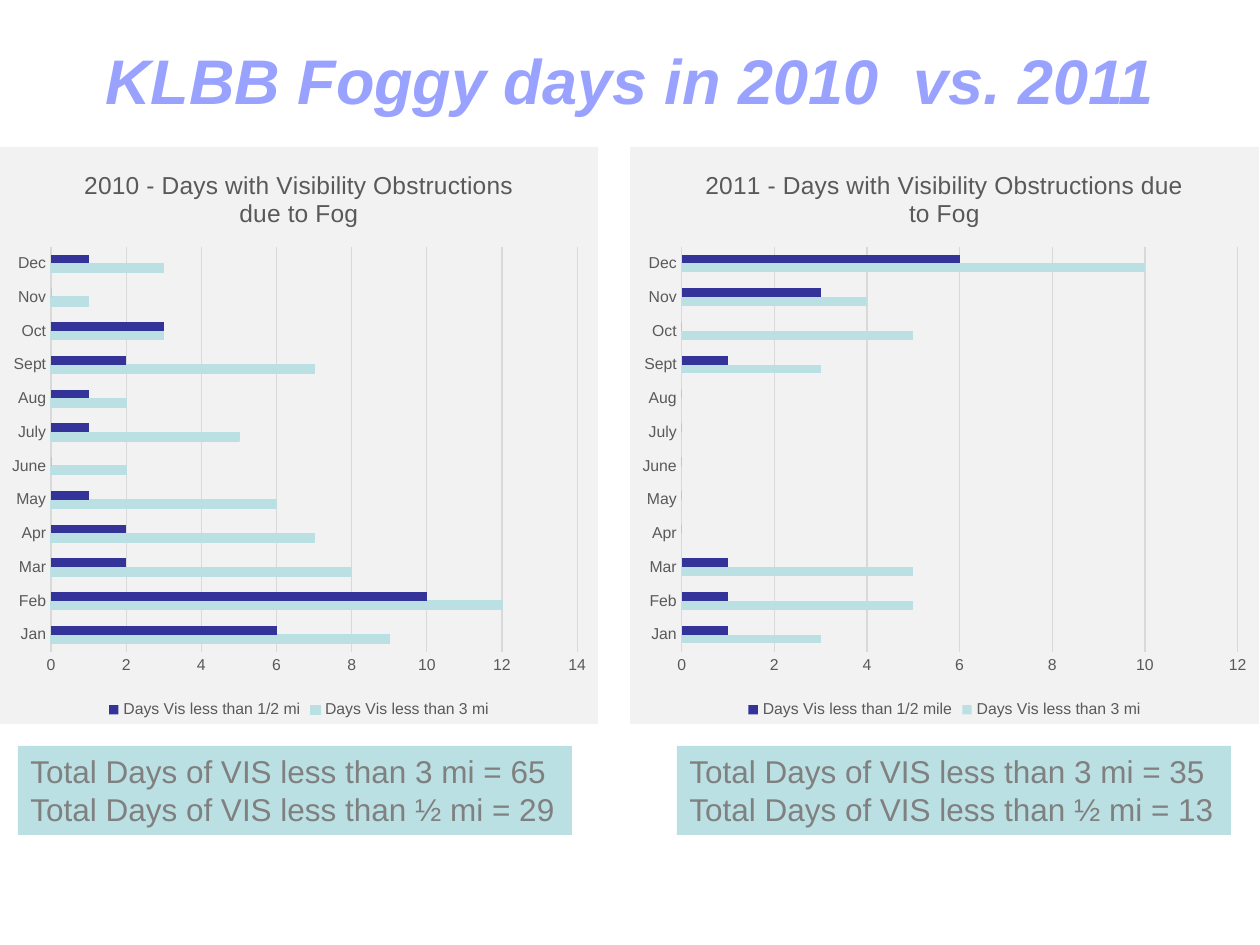
from dataclasses import dataclass

from lxml import etree
from pptx import Presentation
from pptx.chart.data import CategoryChartData
from pptx.dml.color import RGBColor
from pptx.enum.chart import XL_CHART_TYPE as ChartType
from pptx.enum.chart import XL_LEGEND_POSITION as LegendPosition
from pptx.enum.chart import XL_TICK_MARK as TickMark
from pptx.enum.shapes import MSO_SHAPE as Shape
from pptx.enum.text import MSO_ANCHOR as Anchor
from pptx.enum.text import MSO_AUTO_SIZE as AutoSize
from pptx.enum.text import PP_ALIGN as Align
from pptx.util import Emu, Pt

EMU_PER_PX = 914400 / 126
FONT = "Arial"
TITLE_BLUE = RGBColor(0x99, 0xA3, 0xFF)
NAVY = RGBColor(0x33, 0x33, 0x99)
PALE_TEAL = RGBColor(0xBB, 0xE0, 0xE3)
PANEL_GREY = RGBColor(0xF2, 0xF2, 0xF2)
GRID_GREY = RGBColor(0xD9, 0xD9, 0xD9)
LABEL_GREY = RGBColor(0x59, 0x59, 0x59)
TOTAL_GREY = RGBColor(0x80, 0x80, 0x80)

MONTHS = ["Jan", "Feb", "Mar", "Apr", "May", "June",
          "July", "Aug", "Sept", "Oct", "Nov", "Dec"]
CHART_TOP, CHART_HEIGHT = 147, 577
TOTALS_TOP, TOTALS_WIDTH, TOTALS_HEIGHT = 746, 554, 89


@dataclass(frozen=True)
class FogYear:
    year: int
    chart_left: int
    chart_width: int
    totals_left: int
    axis_max: int
    half_mile_label: str
    under_three_miles: list[int]
    under_half_mile: list[int]


FOG_YEARS = [
    FogYear(2010, 0, 598, 18, 14, "Days Vis less than 1/2 mi",
            [9, 12, 8, 7, 6, 2, 5, 2, 7, 3, 1, 3],
            [6, 10, 2, 2, 1, 0, 1, 1, 2, 3, 0, 1]),
    FogYear(2011, 630, 629, 677, 12, "Days Vis less than 1/2 mile",
            [3, 5, 5, 0, 0, 0, 0, 0, 3, 5, 4, 10],
            [1, 1, 1, 0, 0, 0, 0, 0, 1, 0, 3, 6]),
]


def px(length: int) -> Emu:
    return Emu(round(length * EMU_PER_PX))


def box(left: int, top: int, width: int, height: int) -> tuple[Emu, ...]:
    return px(left), px(top), px(width), px(height)


def style_font(font, size: int, color: RGBColor, bold=False, italic=False) -> None:
    font.name, font.size = FONT, Pt(size)
    font.bold, font.italic = bold, italic
    font.color.rgb = color


def write_text(frame, lines: list[str], *, size: int, color: RGBColor,
               align=Align.LEFT, bold=False, italic=False) -> None:
    for index, line in enumerate(lines):
        paragraph = frame.paragraphs[0] if index == 0 else frame.add_paragraph()
        paragraph.alignment = align
        run = paragraph.add_run()
        run.text = line
        style_font(run.font, size, color, bold, italic)


def fill_chart_area(chart, color: RGBColor) -> None:
    """Give the whole chart a borderless background."""
    area = etree.fromstring(
        '<c:spPr xmlns:c="http://schemas.openxmlformats.org/drawingml/2006/chart"'
        ' xmlns:a="http://schemas.openxmlformats.org/drawingml/2006/main">'
        f'<a:solidFill><a:srgbClr val="{color}"/></a:solidFill>'
        '<a:ln><a:noFill/></a:ln></c:spPr>')
    chart.element.chart.addnext(area)


def style_line(line, color: RGBColor) -> None:
    line.color.rgb = color
    line.width = Pt(0.75)


def add_fog_chart(slide, fog: FogYear) -> None:
    days = CategoryChartData()
    days.categories = MONTHS
    days.add_series("Days Vis less than 3 mi", fog.under_three_miles)
    days.add_series(fog.half_mile_label, fog.under_half_mile)
    chart = slide.shapes.add_chart(
        ChartType.BAR_CLUSTERED,
        *box(fog.chart_left, CHART_TOP, fog.chart_width, CHART_HEIGHT), days).chart
    style_font(chart.font, 10, RGBColor(0, 0, 0))
    fill_chart_area(chart, PANEL_GREY)

    chart.has_title = True
    write_text(chart.chart_title.text_frame,
               [f"{fog.year} - Days with Visibility Obstructions due to Fog"],
               size=14, color=LABEL_GREY, align=Align.CENTER)

    chart.has_legend = True
    chart.legend.position = LegendPosition.BOTTOM
    chart.legend.include_in_layout = False
    style_font(chart.legend.font, 9, LABEL_GREY)

    months, counts = chart.category_axis, chart.value_axis
    for axis in (months, counts):
        axis.major_tick_mark = axis.minor_tick_mark = TickMark.NONE
        style_font(axis.tick_labels.font, 9, LABEL_GREY)
    style_line(months.format.line, GRID_GREY)
    counts.format.line.fill.background()
    counts.minimum_scale, counts.maximum_scale = 0, fog.axis_max
    counts.major_unit = 2
    counts.has_major_gridlines = True
    style_line(counts.major_gridlines.format.line, GRID_GREY)

    plot = chart.plots[0]
    plot.gap_width = 182
    plot.vary_by_categories = False
    for series, color in zip(plot.series, (PALE_TEAL, NAVY)):
        series.format.fill.solid()
        series.format.fill.fore_color.rgb = color
    if fog.year == 2010:
        style_line(plot.series[0].format.line, PALE_TEAL)


def add_totals(slide, fog: FogYear) -> None:
    totals = slide.shapes.add_shape(
        Shape.RECTANGLE,
        *box(fog.totals_left, TOTALS_TOP, TOTALS_WIDTH, TOTALS_HEIGHT))
    totals.shadow.inherit = False
    totals.fill.solid()
    totals.fill.fore_color.rgb = PALE_TEAL
    totals.line.fill.background()
    frame = totals.text_frame
    frame.word_wrap = False
    frame.auto_size = AutoSize.SHAPE_TO_FIT_TEXT
    frame.vertical_anchor = Anchor.TOP
    write_text(frame,
               [f"Total Days of VIS less than 3 mi = {sum(fog.under_three_miles)}",
                f"Total Days of VIS less than ½ mi = {sum(fog.under_half_mile)}"],
               size=18, color=TOTAL_GREY)


def add_title(slide) -> None:
    title = slide.shapes.title
    title.left, title.top, title.width, title.height = box(63, 0, 1134, 158)
    title.text_frame.vertical_anchor = Anchor.MIDDLE
    write_text(title.text_frame, ["KLBB Foggy days in 2010  vs. 2011"], size=36,
               color=TITLE_BLUE, align=Align.CENTER, bold=True, italic=True)


def main() -> None:
    presentation = Presentation()
    presentation.slide_width, presentation.slide_height = px(1260), px(945)
    slide = presentation.slides.add_slide(presentation.slide_layouts[5])
    add_title(slide)
    for fog in FOG_YEARS:
        add_fog_chart(slide, fog)
    for fog in FOG_YEARS:
        add_totals(slide, fog)
    presentation.save("out.pptx")


if __name__ == "__main__":
    main()
